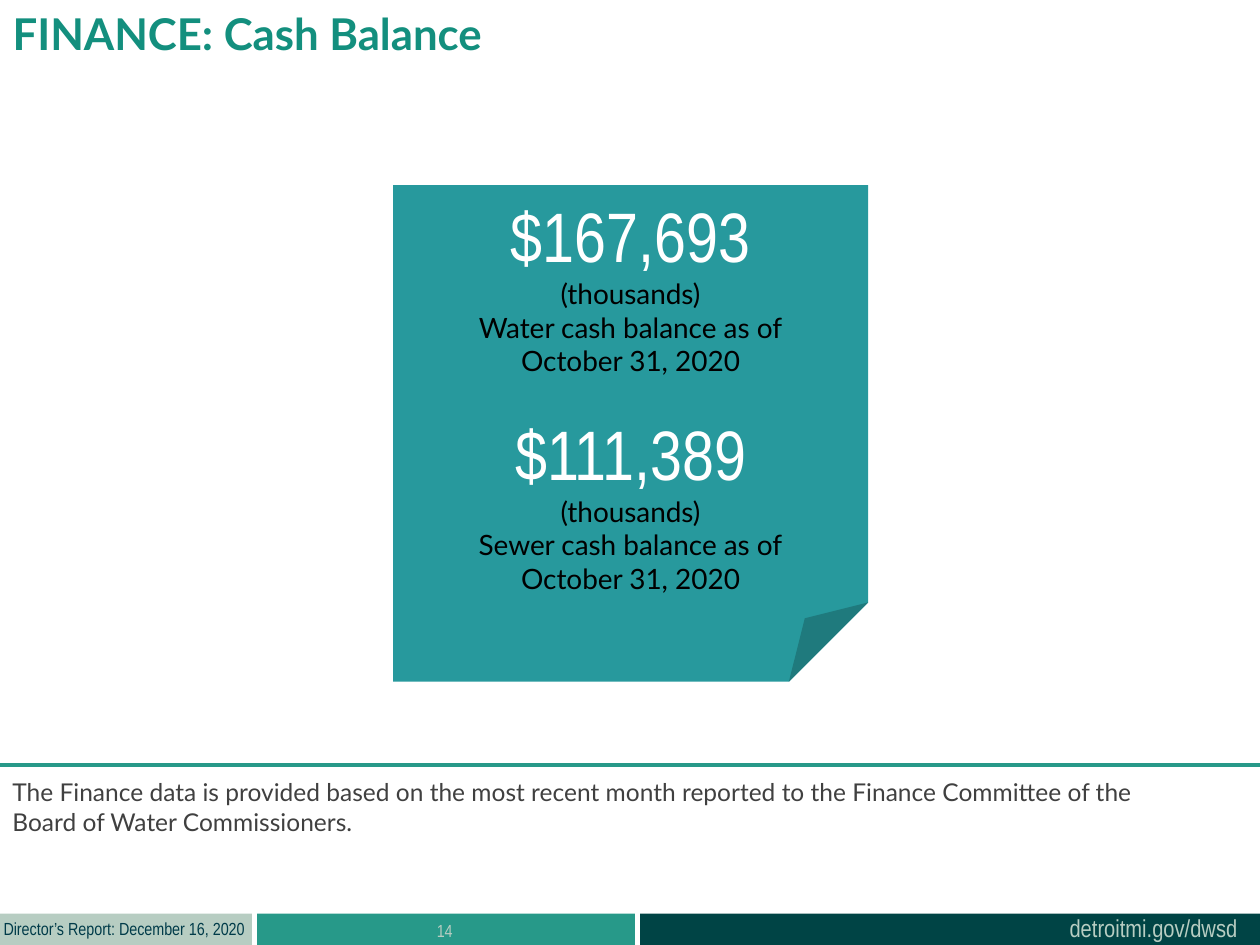
from pptx import Presentation
from pptx.util import Inches, Pt
from pptx.dml.color import RGBColor as RGB
from pptx.enum.shapes import MSO_SHAPE as Shape, MSO_CONNECTOR as Conn
from pptx.enum.text import PP_ALIGN as Align, MSO_ANCHOR as Anchor, MSO_AUTO_SIZE as Auto
from pptx.oxml.ns import qn
from lxml import etree

HEX = {
    "green": "279989", "dark": "004445", "pale": "B7CDC2", "navy": "003B49",
    "title": "138F7E", "teal": "27999D", "white": "FFFFFF", "black": "000000",
    "gray": "404040",
}
NARROW, LATO = "Arial Narrow", "Lato"


class Deck:
    def __init__(self):
        self.prs = Presentation()
        self.prs.slide_width, self.prs.slide_height = Inches(10), Inches(7.5)
        self.slide = self.prs.slides.add_slide(self.prs.slide_layouts[5])

    def put(self, para, text, size, font, color, bold=False, align=Align.LEFT):
        """Add one run per line of text, with line breaks between."""
        para.alignment = align
        for i, line in enumerate(text.split("\n")):
            if i:
                para.add_line_break()
            run = para.add_run()
            run.text = line
            run.font.size, run.font.name, run.font.bold = Pt(size), font, bold
            run.font.color.rgb = RGB.from_string(HEX[color])

    def title(self, box, text, size, font, color):
        head = self.slide.shapes.title
        head.left, head.top, head.width, head.height = map(Inches, box)
        frame = head.text_frame
        frame.auto_size, frame.vertical_anchor = Auto.NONE, Anchor.TOP
        self.put(frame.paragraphs[0], text, size, font, color, bold=True)

    def block(self, box, color, kind=Shape.RECTANGLE):
        shape = self.slide.shapes.add_shape(kind, *map(Inches, box))
        shape.shadow.inherit = False
        shape.fill.solid()
        shape.fill.fore_color.rgb = RGB.from_string(HEX[color])
        shape.line.fill.background()
        return shape

    def label(self, box, text, size, font, color, wrap=True, align=Align.LEFT):
        frame = self.slide.shapes.add_textbox(*map(Inches, box)).text_frame
        frame.word_wrap = wrap
        self.put(frame.paragraphs[0], text, size, font, color, align=align)

    def rule(self, start, end, color, width):
        line = self.slide.shapes.add_connector(
            Conn.STRAIGHT, *map(Inches, start + end))
        line.line.color.rgb = RGB.from_string(HEX[color])
        line.line.width = Pt(width)
        etree.SubElement(line._element.spPr, qn("a:effectLst"))

    def note(self, box, color, funds):
        """Folded note with an amount and a caption for each fund."""
        frame = self.block(box, color, Shape.FOLDED_CORNER).text_frame
        frame.word_wrap, frame.vertical_anchor = True, Anchor.MIDDLE
        for i, (amount, fund) in enumerate(funds):
            para = frame.add_paragraph() if i else frame.paragraphs[0]
            if i:
                para.space_before = Pt(19)
            self.put(para, amount, 40, NARROW, "white", align=Align.CENTER)
            caption = f"{fund} cash balance as of\nOctober 31, 2020"
            for text in ("(thousands)", caption):
                self.put(frame.add_paragraph(), text, 16, LATO, "black",
                         align=Align.CENTER)


def main():
    deck = Deck()

    # Footer
    for left, width, color in ((2.04, 3, "green"), (5.08, 4.92, "dark"), (0, 2, "pale")):
        deck.block((left, 7.25, width, 0.25), color)
    deck.label((8.39, 7.2, 1.55, 0.34), "detroitmi.gov/dwsd", 14, NARROW, "pale", wrap=False)
    deck.label((-0.07, 7.24, 2.13, 0.27), "Director’s Report: December 16, 2020",
               10, NARROW, "navy", wrap=False)
    deck.label((2.03, 7.25, 3, 0.4), "14", 10, NARROW, "pale", align=Align.CENTER)

    # Title
    deck.title((0, 0, 7.59, 0.77), "FINANCE: Cash Balance", 25, LATO, "title")

    # Cash balances
    deck.rule((10, 6.07), (0, 6.07), "green", 2.25)
    deck.note((3.12, 1.47, 3.77, 3.94), "teal",
              (("$167,693", "Water"), ("$111,389", "Sewer")))

    # Source of the data
    deck.label((0, 6.12, 10, 0.57),
               "The Finance data is provided based on the most recent month reported "
               "to the Finance Committee of the\nBoard of Water Commissioners.",
               14, LATO, "gray")

    deck.prs.save("out.pptx")


if __name__ == "__main__":
    main()
